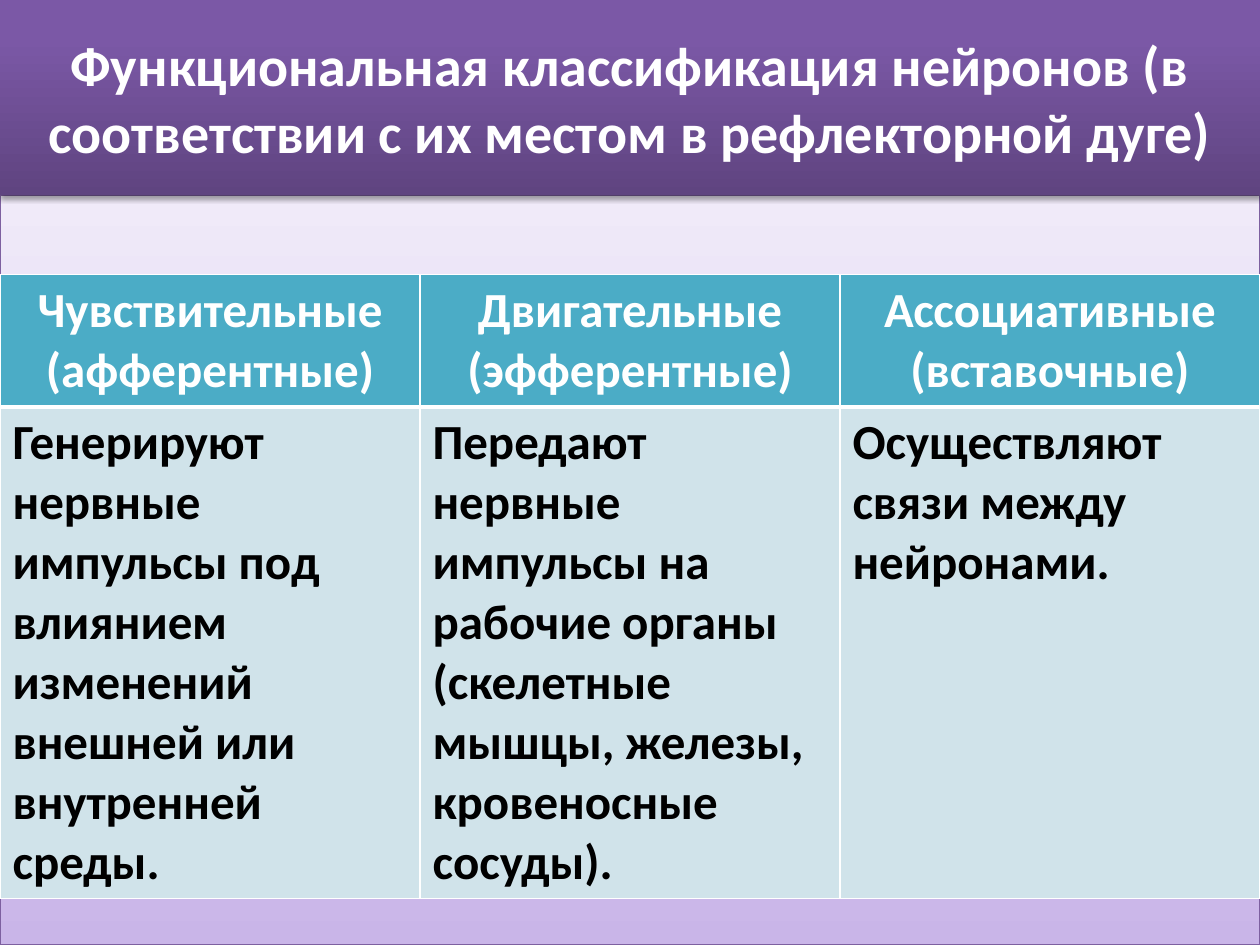
from dataclasses import dataclass

from lxml import etree
from pptx import Presentation
from pptx import util as u
from pptx.dml.color import RGBColor
from pptx.enum import shapes, text
from pptx.oxml.ns import qn

WHITE = RGBColor(0xFF, 0xFF, 0xFF)
BLACK = RGBColor(0x00, 0x00, 0x00)
TEAL = RGBColor(0x4B, 0xAC, 0xC6)
PALE_TEAL = RGBColor(0xD0, 0xE3, 0xEA)
PURPLE = RGBColor(0x7D, 0x60, 0xA0)
LILAC_STOPS = (
    (0, RGBColor(0xC9, 0xB5, 0xE8)),
    (35, RGBColor(0xD8, 0xCB, 0xEE)),
    (100, RGBColor(0xF0, 0xEA, 0xF9)),
)
VIOLET_STOPS = (
    (0, RGBColor(0x5F, 0x44, 0x80)),
    (80, RGBColor(0x7B, 0x58, 0xA6)),
    (100, RGBColor(0x7C, 0x57, 0xA8)),
)
FONT = "Calibri"
SLIDE_WIDTH = u.Inches(10)
SLIDE_HEIGHT = u.Inches(7.5)
TITLE_HEIGHT = u.Inches(1.55)


@dataclass(frozen=True)
class NeuronType:
    name: str
    role: str


@dataclass(frozen=True)
class CellStyle:
    fill: RGBColor
    color: RGBColor
    alignment: text.PP_ALIGN
    top: float
    bottom: float


NEURON_TYPES = (
    NeuronType(
        "Чувствительные (афферентные)",
        "Генерируют нервные импульсы под влиянием изменений внешней или внутренней среды.",
    ),
    NeuronType(
        "Двигательные (эфферентные)",
        "Передают нервные импульсы на рабочие органы "
        "(скелетные мышцы, железы, кровеносные сосуды).",
    ),
    NeuronType("Ассоциативные (вставочные)", "Осуществляют связи между нейронами."),
)
HEADER = CellStyle(TEAL, WHITE, text.PP_ALIGN.CENTER, 1, 3)
BODY = CellStyle(PALE_TEAL, BLACK, text.PP_ALIGN.LEFT, 3, 1)


def place(shape, left: int, top: int, width: int, height: int) -> None:
    shape.left, shape.top, shape.width, shape.height = left, top, width, height


def fill_gradient(shape, stops: tuple) -> None:
    shape.fill.gradient()
    shape.fill.gradient_angle = 90
    stop_list = shape._element.spPr.find(".//" + qn("a:gsLst"))
    for stop in list(stop_list):
        stop_list.remove(stop)
    for position, color in stops:
        stop = etree.SubElement(stop_list, qn("a:gs"), pos=str(position * 1000))
        etree.SubElement(stop, qn("a:srgbClr"), val=str(color))


def add_shadow(shape, opacity: int, distance: float) -> None:
    shape.shadow.inherit = False
    effects = shape._element.spPr.find(qn("a:effectLst"))
    shadow = etree.SubElement(
        effects, qn("a:outerShdw"), blurRad=str(u.Pt(3.1)), dist=str(u.Pt(distance)),
        dir=str(90 * 60000), rotWithShape="0",
    )
    color = etree.SubElement(shadow, qn("a:srgbClr"), val=str(BLACK))
    etree.SubElement(color, qn("a:alpha"), val=str(opacity * 1000))


def write(text_frame, words: str, size: int, color: RGBColor, alignment: text.PP_ALIGN) -> None:
    paragraph = text_frame.paragraphs[0]
    paragraph.alignment = alignment
    run = paragraph.add_run()
    run.text = words
    run.font.name = FONT
    run.font.size = u.Pt(size)
    run.font.bold = True
    run.font.color.rgb = color


def draw_cell(cell, words: str, style: CellStyle) -> None:
    properties = cell._tc.get_or_add_tcPr()
    widths = {"a:lnL": 1, "a:lnR": 1, "a:lnT": style.top, "a:lnB": style.bottom}
    for tag, width in widths.items():
        border = etree.SubElement(properties, qn(tag), w=str(u.Pt(width)))
        solid = etree.SubElement(border, qn("a:solidFill"))
        etree.SubElement(solid, qn("a:srgbClr"), val=str(WHITE))
    cell.fill.solid()
    cell.fill.fore_color.rgb = style.fill
    write(cell.text_frame, words, 28, style.color, style.alignment)


def draw_backdrop(slide) -> None:
    backdrop = slide.shapes.add_shape(
        shapes.MSO_SHAPE.RECTANGLE, 0, TITLE_HEIGHT, SLIDE_WIDTH, SLIDE_HEIGHT - TITLE_HEIGHT
    )
    fill_gradient(backdrop, LILAC_STOPS)
    backdrop.line.color.rgb = PURPLE
    backdrop.line.width = u.Pt(0.75)
    add_shadow(backdrop, 38, 1.6)
    slide.shapes.title._element.addprevious(backdrop._element)


def draw_title(slide, words: str) -> None:
    title = slide.shapes.title
    place(title, 0, 0, SLIDE_WIDTH, TITLE_HEIGHT)
    fill_gradient(title, VIOLET_STOPS)
    add_shadow(title, 35, 1.8)
    title.text_frame.auto_size = text.MSO_AUTO_SIZE.NONE
    title.text_frame.vertical_anchor = text.MSO_ANCHOR.MIDDLE
    write(title.text_frame, words, 32, WHITE, text.PP_ALIGN.CENTER)


def draw_table(slide) -> None:
    table = slide.shapes.add_table(
        2, len(NEURON_TYPES), 0, u.Inches(2.18), SLIDE_WIDTH, u.Inches(4.87)
    ).table
    table.rows[0].height = u.Inches(1.04)
    table.rows[1].height = u.Inches(3.83)
    for column, neuron in enumerate(NEURON_TYPES):
        draw_cell(table.cell(0, column), neuron.name, HEADER)
        draw_cell(table.cell(1, column), neuron.role, BODY)


def main() -> None:
    presentation = Presentation()
    presentation.slide_width = SLIDE_WIDTH
    presentation.slide_height = SLIDE_HEIGHT
    slide = presentation.slides.add_slide(presentation.slide_layouts[5])
    draw_backdrop(slide)
    draw_title(
        slide,
        "Функциональная классификация нейронов (в соответствии с их местом в рефлекторной дуге)",
    )
    draw_table(slide)
    presentation.save("out.pptx")


if __name__ == "__main__":
    main()
